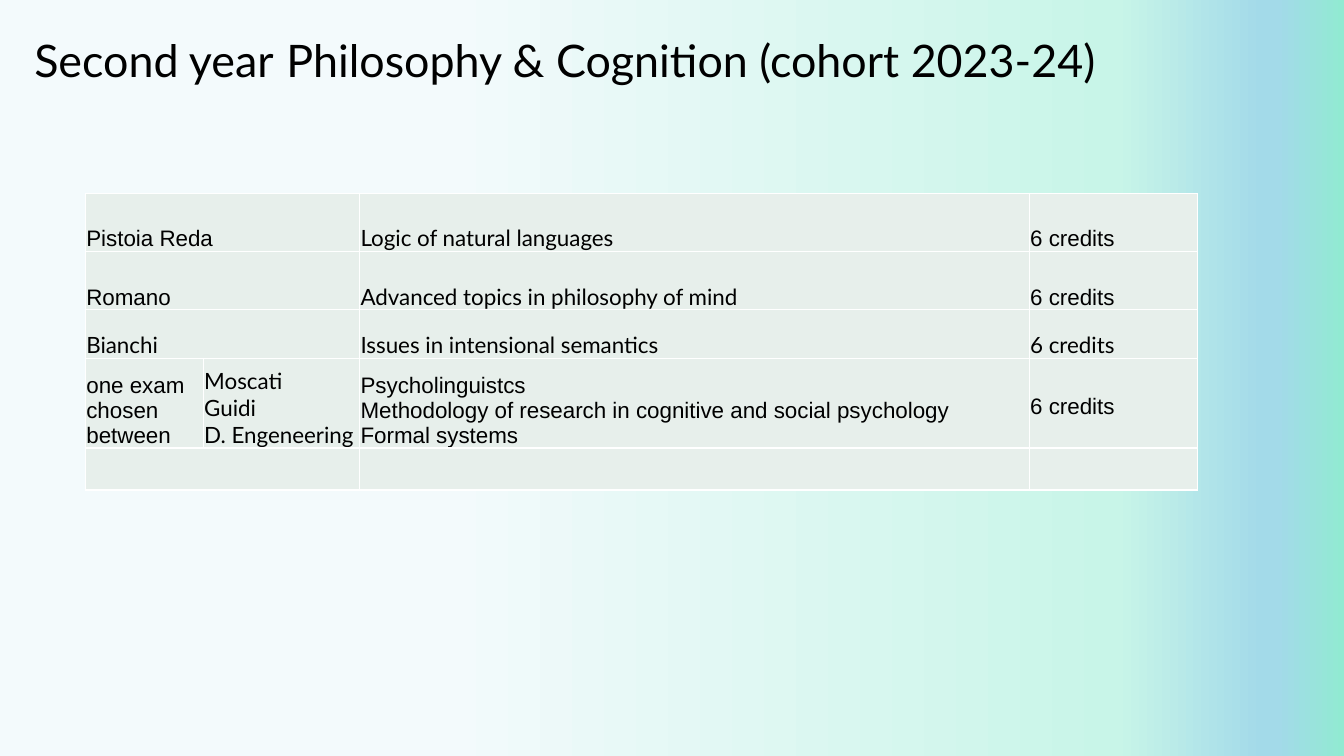
from lxml import etree
from pptx import Presentation
from pptx.dml.color import RGBColor
from pptx.enum import text
from pptx.oxml.ns import qn
from pptx.util import Pt


def color(hex_string):
    return RGBColor.from_string(hex_string)


def write(frame, content, font="Arial", size=16, fill="000000", spacing=1.0):
    """Put each line of content in its own paragraph of the frame."""
    frame.text = content
    for paragraph in frame.paragraphs:
        paragraph.alignment = text.PP_ALIGN.LEFT
        paragraph.line_spacing = spacing
        for run in paragraph.runs:
            run.font.name = font
            run.font.size = Pt(size)
            run.font.color.rgb = color(fill)


presentation = Presentation()
presentation.slide_width, presentation.slide_height = Pt(960), Pt(540)
slide = presentation.slides.add_slide(presentation.slide_layouts[5])

# Background gradient, left to right
background = slide.background.fill
background.gradient()
background.gradient_angle = 0
stop_list = slide.element.find(".//" + qn("a:gsLst"))
stop_list.clear()
for percent, shade in [(0, "F3FAFC"), (33, "F3FAFC"), (83, "C8F5E8"),
                       (94, "A3DAE9"), (95, "A3DAE9"), (100, "91EAD2")]:
    stop = etree.SubElement(stop_list, qn("a:gs"), pos=str(percent * 1000))
    etree.SubElement(stop, qn("a:srgbClr"), val=shade)

# Title
title = slide.shapes.title
title.left, title.top, title.width, title.height = Pt(17.3), Pt(13.7), Pt(882.7), Pt(62)
title.text_frame.auto_size = text.MSO_AUTO_SIZE.NONE
title.text_frame.vertical_anchor = text.MSO_ANCHOR.MIDDLE
write(title.text_frame, "Second year \tPhilosophy & Cognition (cohort 2023-24)",
      font="Lato", size=32, spacing=0.9)

# Course table: each cell is (text, font); None belongs to the merged cell on its left
empty = ("", "Arial")
credits = ("6 credits", "Arial")
courses = [
    [("Pistoia Reda", "Arial"), None, ("Logic of natural languages", "Lato"), credits],
    [("Romano", "Arial"), None, ("Advanced topics in philosophy of mind", "Lato"), credits],
    [("Bianchi", "Lato"), None, ("Issues in intensional semantics", "Lato"),
     ("6 credits", "Lato")],
    [("one exam chosen\nbetween", "Arial"),
     ("Moscati\nGuidi\nD. Engeneering", "Lato"),
     ("Psycholinguistcs\nMethodology of research in cognitive and social psychology\n"
      "Formal systems", "Arial"),
     credits],
    [empty, None, empty, empty],
]
column_widths = [84.2, 111.7, 478.3, 120.3]
row_heights = [41.5, 41.5, 34.6, 64.2, 30]
table = slide.shapes.add_table(len(row_heights), len(column_widths), Pt(61), Pt(138.3),
                               Pt(sum(column_widths)), Pt(sum(row_heights))).table
table.first_row = table.horz_banding = False
for column, width in zip(table.columns, column_widths):
    column.width = Pt(width)
for row, height in zip(table.rows, row_heights):
    row.height = Pt(height)

for row_index, course in enumerate(courses):
    for column_index, entry in enumerate(course):
        cell = table.cell(row_index, column_index)
        properties = cell._tc.get_or_add_tcPr()
        for side in ("lnL", "lnR", "lnT", "lnB"):
            border = etree.SubElement(properties, qn("a:" + side), w=str(Pt(1)))
            line_fill = etree.SubElement(border, qn("a:solidFill"))
            etree.SubElement(line_fill, qn("a:srgbClr"), val="FFFFFF")
        cell.fill.solid()
        cell.fill.fore_color.rgb = color("E7EFEB")
        cell.margin_left = cell.margin_right = cell.margin_top = Pt(0.7)
        cell.margin_bottom = Pt(0)
        cell.vertical_anchor = text.MSO_ANCHOR.BOTTOM
        if entry is None:
            table.cell(row_index, column_index - 1).merge(cell)
        else:
            content, font = entry
            write(cell.text_frame, content, font=font)

# The credits of the elective row sit one line above the bottom
table.cell(3, 3).margin_bottom = Pt(20.5)

presentation.save("out.pptx")
